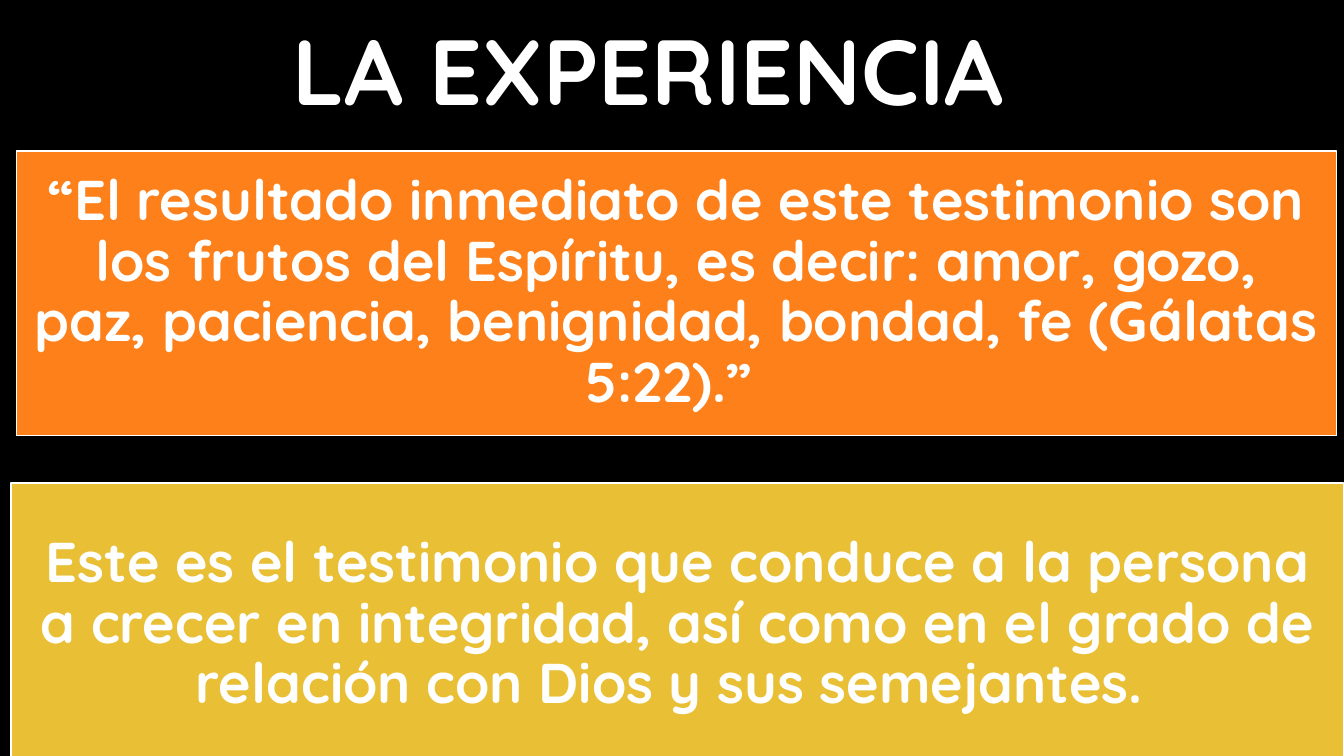
from dataclasses import dataclass

from pptx import Presentation
from pptx.dml.color import RGBColor as Rgb
from pptx.enum.shapes import MSO_SHAPE as Preset
from pptx.enum.text import MSO_ANCHOR as Anchor, MSO_AUTO_SIZE as AutoSize, PP_ALIGN as Align
from pptx.util import Cm, Pt


@dataclass(frozen=True)
class Theme:
    font: str = "Quicksand"
    title_size: int = 66
    body_size: int = 40
    black: Rgb = Rgb(0x00, 0x00, 0x00)
    white: Rgb = Rgb(0xFF, 0xFF, 0xFF)
    orange: Rgb = Rgb(0xFE, 0x80, 0x1A)
    yellow: Rgb = Rgb(0xE9, 0xBF, 0x35)


theme = Theme()


def set_all(target, values):
    for name, value in values.items():
        setattr(target, name, value)


def write(frame, text, size, space_after):
    set_all(frame, dict(word_wrap=True, auto_size=AutoSize.NONE, vertical_anchor=Anchor.MIDDLE))
    para = frame.paragraphs[0]
    set_all(para, dict(alignment=Align.CENTER, line_spacing=0.9,
                       space_before=Pt(0), space_after=Pt(space_after)))
    span = para.add_run()
    span.text = text
    set_all(span.font, dict(name=theme.font, size=Pt(size), bold=True))
    span.font.color.rgb = theme.white


# Page
deck = Presentation()
set_all(deck, dict(slide_width=Cm(33.87), slide_height=Cm(19.05)))
page = deck.slides.add_slide(deck.slide_layouts[5])
page.background.fill.solid()
page.background.fill.fore_color.rgb = theme.black

# Title
title = page.shapes.title
set_all(title, dict(left=Cm(3.61), top=Cm(0.23), width=Cm(26.11), height=Cm(3.33)))
write(title.text_frame, "LA EXPERIENCIA ", theme.title_size, 0)

# Message panels: left, top, width, fill, text
panels = [
    (0.41, 3.81, 33.27, theme.orange,
     "“El resultado inmediato de este testimonio son los frutos del Espíritu, "
     "es decir: amor, gozo, paz, paciencia, benignidad, bondad, fe (Gálatas 5:22).” "),
    (0.28, 12.17, 33.58, theme.yellow,
     "Este es el testimonio que conduce a la persona a crecer en integridad, "
     "así como en el grado de relación con Dios y sus semejantes. "),
]
margins = dict.fromkeys(("margin_left", "margin_top", "margin_right", "margin_bottom"), Cm(0.43))
for left, top, width, color, text in panels:
    panel = page.shapes.add_shape(Preset.RECTANGLE, Cm(left), Cm(top), Cm(width), Cm(7.16))
    panel.shadow.inherit = False
    panel.fill.solid()
    panel.fill.fore_color.rgb = color
    panel.line.color.rgb = theme.white
    panel.line.width = Pt(1)
    set_all(panel.text_frame, margins)
    write(panel.text_frame, text, theme.body_size, 0.35 * theme.body_size)

deck.save("out.pptx")
